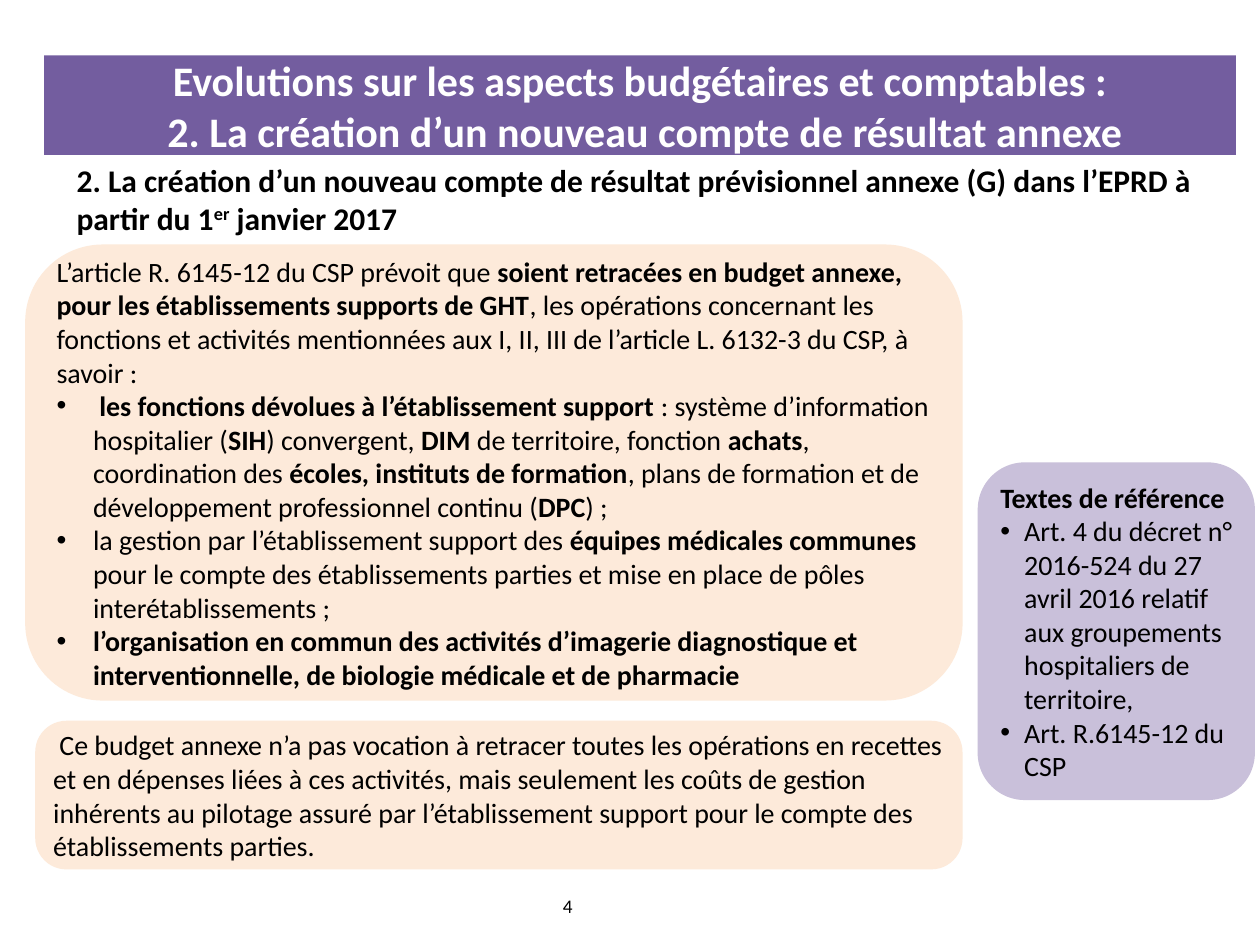
import pptx
import pptx.util
import pptx.dml.color
import pptx.enum.shapes
import pptx.enum.text
from lxml import etree
from pptx.oxml.ns import qn

WIDTH, HEIGHT = pptx.util.Inches(10), pptx.util.Inches(7.5)
PURPLE, LILAC, PEACH = "735D9F", "C9C0DA", "FDEADA"
WHITE, BLACK = "FFFFFF", "000000"
MARGINS = (0.07, 0.04)
CORNER_INSET = 0.29

TITLE = [
    "Evolutions sur les aspects budgétaires et comptables :",
    " 2. La création d’un nouveau compte de résultat annexe",
]
SUBTITLE = [
    "**2. La création d’un nouveau compte de résultat prévisionnel annexe (G) "
    "dans l’EPRD à partir du 1^^er^^ janvier 2017**"
]
FUNCTIONS = [
    "L’article R. 6145-12 du CSP prévoit que **soient retracées en budget annexe, "
    "pour les établissements supports de GHT**, les opérations concernant les fonctions "
    "et activités mentionnées aux I, II, III de l’article L. 6132-3 du CSP, à savoir :",
    " **les fonctions dévolues à l’établissement support** : système d’information "
    "hospitalier (**SIH**) convergent, **DIM** de territoire, fonction **achats**, "
    "coordination des **écoles, instituts de formation**, plans de formation et de "
    "développement professionnel continu (**DPC**) ;",
    "la gestion par l’établissement support des **équipes médicales communes **"
    "pour le compte des établissements parties et mise en place de pôles "
    "interétablissements ;",
    "**l’organisation en commun des activités d’imagerie diagnostique et "
    "interventionnelle, de biologie médicale et de pharmacie**",
]
REFERENCES = [
    "**Textes de référence**",
    "Art. 4 du décret n° 2016-524 du 27 avril 2016 relatif aux groupements "
    "hospitaliers de territoire,",
    "Art. R.6145-12 du CSP",
]
NOTE = [
    " Ce budget annexe n’a pas vocation à retracer toutes les opérations en recettes "
    "et en dépenses liées à ces activités, mais seulement les coûts de gestion inhérents "
    "au pilotage assuré par l’établissement support pour le compte des établissements "
    "parties."
]


def color(value):
    return pptx.dml.color.RGBColor.from_string(value)


def area(left, top, width, height):
    return [int(share * side / 100) for share, side in
            zip((left, top, width, height), (WIDTH, HEIGHT, WIDTH, HEIGHT))]


def place(shape, box):
    shape.left, shape.top, shape.width, shape.height = box


def set_bullet(paragraph, indent):
    properties = paragraph._p.get_or_add_pPr()
    margin = pptx.util.Inches(indent)
    properties.set("marL", str(margin))
    properties.set("indent", str(-margin))
    if indent:
        font = etree.SubElement(properties, qn("a:buFont"))
        font.set("typeface", "Arial")
        etree.SubElement(properties, qn("a:buChar")).set("char", "•")
    else:
        etree.SubElement(properties, qn("a:buNone"))


def add_runs(paragraph, text, size, font_color):
    for bold_index, part in enumerate(text.split("**")):
        for raised_index, piece in enumerate(part.split("^^")):
            if not piece:
                continue
            run = paragraph.add_run()
            run.text = piece
            run.font.name = "Calibri"
            run.font.size = pptx.util.Pt(size)
            run.font.bold = bold_index % 2 == 1
            run.font.color.rgb = color(font_color)
            if raised_index % 2:
                run._r.get_or_add_rPr().set("baseline", "30000")


def write(shape, texts, size, font_color=BLACK, align="LEFT", anchor="MIDDLE",
          margins=MARGINS, indent=0):
    frame = shape.text_frame
    frame.word_wrap = True
    frame.auto_size = pptx.enum.text.MSO_AUTO_SIZE.NONE
    frame.vertical_anchor = getattr(pptx.enum.text.MSO_ANCHOR, anchor)
    frame.margin_left = frame.margin_right = pptx.util.Inches(margins[0])
    frame.margin_top = frame.margin_bottom = pptx.util.Inches(margins[1])
    for index, text in enumerate(texts):
        paragraph = frame.add_paragraph() if index else frame.paragraphs[0]
        paragraph.alignment = getattr(pptx.enum.text.PP_ALIGN, align)
        paragraph.space_before = pptx.util.Pt(0)
        set_bullet(paragraph, indent if index else 0)
        add_runs(paragraph, text, size, font_color)


def add_card(slide, box, fill, corner=0.17):
    card = slide.shapes.add_shape(
        pptx.enum.shapes.MSO_SHAPE.ROUNDED_RECTANGLE, *box)
    card.shadow.inherit = False
    card.adjustments[0] = corner
    card.fill.solid()
    card.fill.fore_color.rgb = color(fill)
    card.line.fill.background()
    return card


def add_list_card(slide, placeholder, box, fill, texts, indent):
    card = add_card(slide, box, fill)
    inset = int(CORNER_INSET * card.adjustments[0] * min(card.width, card.height))
    left, top, width, height = box
    place(placeholder, (left + inset, top + inset,
                        width - 2 * inset, height - 2 * inset))
    card._element.addnext(placeholder._element)
    write(placeholder, texts, 16, indent=indent)


def add_title(slide):
    title = slide.shapes.title
    place(title, area(3.5, 5.87, 94.6, 10.53))
    title.fill.solid()
    title.fill.fore_color.rgb = color(PURPLE)
    write(title, [f"**{line}**" for line in TITLE], 24, WHITE, align="CENTER")


def add_text(slide, box, texts, size):
    text_box = slide.shapes.add_textbox(*box)
    write(text_box, texts, size, anchor="TOP", margins=(0.1, 0.05))


def main():
    presentation = pptx.Presentation()
    presentation.slide_width, presentation.slide_height = WIDTH, HEIGHT
    slide = presentation.slides.add_slide(presentation.slide_layouts[3])
    functions, references = slide.placeholders[1], slide.placeholders[2]
    add_title(slide)
    add_list_card(slide, functions, area(2, 25.87, 74.4, 48.27), PEACH, FUNCTIONS, 0.29)
    add_list_card(slide, references, area(77.6, 48.93, 22, 35.73), LILAC, REFERENCES, 0.19)
    add_text(slide, area(5.1, 16.4, 91.3, 9.47), SUBTITLE, 18)
    note = add_card(slide, area(2.8, 76.27, 73.6, 15.73), PEACH, 0.21)
    write(note, NOTE, 16)
    add_text(slide, area(43.7, 94, 23.3, 5.33), ["4"], 11)
    presentation.save("out.pptx")


if __name__ == "__main__":
    main()
